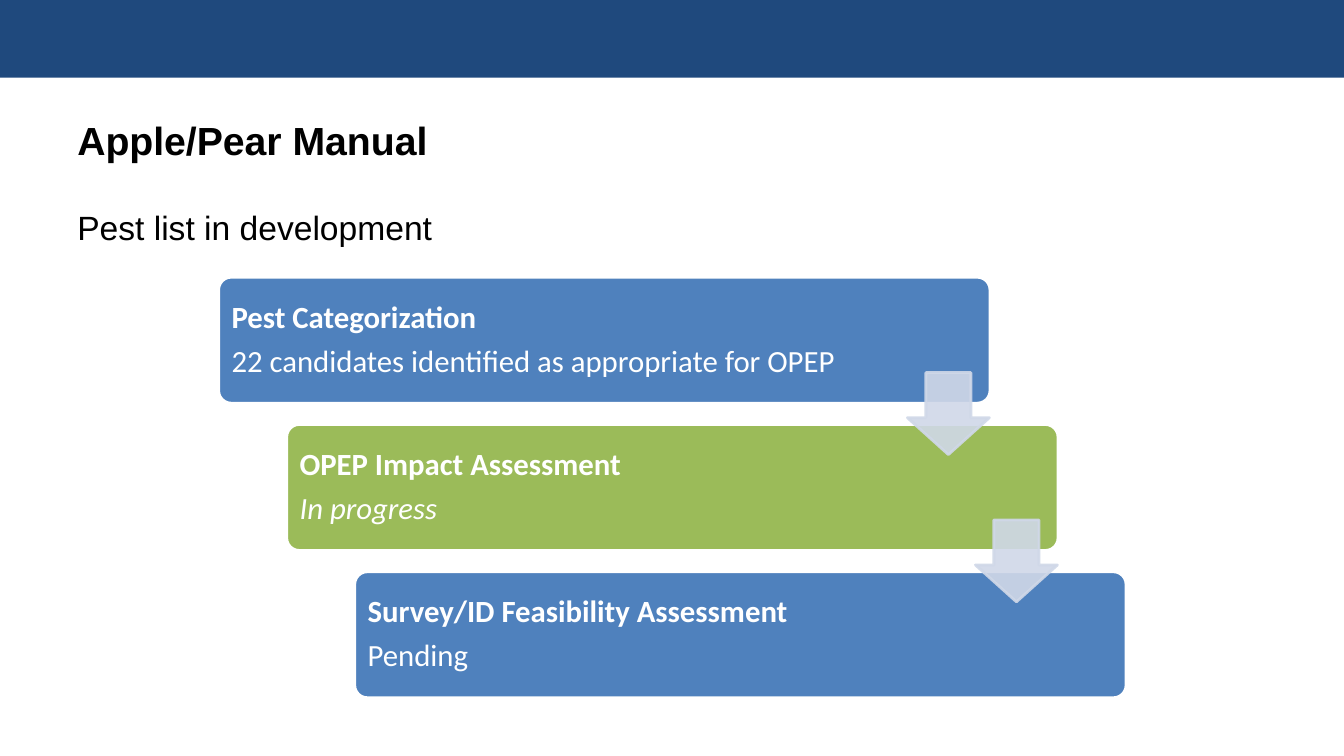
from lxml.etree import SubElement
from pptx import Presentation
from pptx.dml.color import RGBColor
from pptx.enum.shapes import MSO_SHAPE
from pptx.enum.text import MSO_ANCHOR, PP_ALIGN
from pptx.oxml.ns import qn
from pptx.util import Pt

NAVY = RGBColor(0x1F, 0x49, 0x7D)
BLUE = RGBColor(0x4F, 0x81, 0xBD)
GREEN = RGBColor(0x9B, 0xBB, 0x59)
PALE = RGBColor(0xD0, 0xD8, 0xE8)
WHITE = RGBColor(0xFF, 0xFF, 0xFF)
BLACK = RGBColor(0x00, 0x00, 0x00)

STEPS = [
    ("Pest Categorization", "22 candidates identified as appropriate for OPEP", BLUE, False),
    ("OPEP Impact Assessment", "In progress", GREEN, True),
    ("Survey/ID Feasibility Assessment", "Pending", BLUE, False),
]
STEP_WIDTH, STEP_HEIGHT = 551, 90
STEP_RIGHT, STEP_DOWN = 48.6, 105.2
ARROW_SIZE = 58.5


def place(shape, left, top, width, height):
    """Move and size a shape, in points."""
    shape.left, shape.top = Pt(left), Pt(top)
    shape.width, shape.height = Pt(width), Pt(height)


def add_span(para, text, font, size, color, bold=False, italic=False):
    """Add one formatted run to a paragraph."""
    span = para.add_run()
    span.text = text
    span.font.name = font
    span.font.size = Pt(size)
    span.font.color.rgb = color
    span.font.bold = bold
    span.font.italic = italic


def add_block(page, kind, left, top, width, height, fill, line=None):
    """Add a flat preset shape with an optional outline colour."""
    block = page.shapes.add_shape(kind, Pt(left), Pt(top), Pt(width), Pt(height))
    block.shadow.inherit = False
    block.fill.solid()
    block.fill.fore_color.rgb = fill
    if line is None:
        block.line.fill.background()
    else:
        block.line.color.rgb = line
        block.line.width = Pt(2)
    return block


def fill_title(title, left, top, width, height):
    """Place and write the slide title."""
    place(title, left, top, width, height)
    title.text_frame.vertical_anchor = MSO_ANCHOR.MIDDLE
    para = title.text_frame.paragraphs[0]
    para.alignment = PP_ALIGN.LEFT
    add_span(para, "Apple/Pear Manual", "Arial", 28, BLACK, bold=True)


def fill_body(body, left, top, width, height):
    """Place and write the body text without a bullet."""
    place(body, left, top, width, height)
    para = body.text_frame.paragraphs[0]
    para.space_before = Pt(4.8)
    add_span(para, "Pest list in development", "Arial", 24, BLACK)
    properties = para._p.get_or_add_pPr()
    properties.set("marL", "0")
    properties.set("indent", "0")
    SubElement(properties, qn("a:buNone"))


def add_step(page, left, top, heading, status, fill, italic):
    """Add one rounded step box with its heading and status."""
    box = add_block(page, MSO_SHAPE.ROUNDED_RECTANGLE, left, top,
                    STEP_WIDTH, STEP_HEIGHT, fill, WHITE)
    box.adjustments[0] = 0.1
    frame = box.text_frame
    frame.word_wrap = True
    frame.vertical_anchor = MSO_ANCHOR.MIDDLE
    frame.margin_left = frame.margin_right = Pt(6.6)
    frame.margin_top = frame.margin_bottom = Pt(6.6)
    paras = [frame.paragraphs[0], frame.add_paragraph()]
    for para in paras:
        para.alignment = PP_ALIGN.LEFT
        para.line_spacing = 0.9
        para.space_after = Pt(7.7)
    add_span(paras[0], heading, "Calibri", 22, WHITE, bold=True)
    add_span(paras[1], status, "Calibri", 22, WHITE, italic=italic)


def add_step_arrow(page, left, top):
    """Add a translucent arrow pointing to the next step."""
    arrow = add_block(page, MSO_SHAPE.DOWN_ARROW, left, top,
                      ARROW_SIZE, ARROW_SIZE, PALE, PALE)
    arrow.adjustments[0] = 0.55
    arrow.adjustments[1] = 0.45
    for color in arrow._element.spPr.iter(qn("a:srgbClr")):
        SubElement(color, qn("a:alpha"), val="90000")


def add_staircase(page, left, top):
    """Add the descending steps, then the arrows that join them."""
    corners = [(left + STEP_RIGHT * i, top + STEP_DOWN * i) for i in range(len(STEPS))]
    for (x, y), step in zip(corners, STEPS):
        add_step(page, x, y, *step)
    for x, y in corners[:-1]:
        add_step_arrow(page, x + 492, y + 68.2)


def build_page(deck):
    """Build the pest list slide."""
    page = deck.slides.add_slide(deck.slide_layouts[1])
    add_block(page, MSO_SHAPE.RECTANGLE, 0, 0, 960, 55.5, NAVY)
    fill_title(page.shapes.title, 48, 72, 864, 56)
    fill_body(page.placeholders[1], 48, 144, 864, 338.4)
    add_staircase(page, 156.2, 198)


def main():
    """Create and save the deck."""
    deck = Presentation()
    deck.slide_width, deck.slide_height = Pt(960), Pt(540)
    build_page(deck)
    deck.save("out.pptx")


if __name__ == "__main__":
    main()
